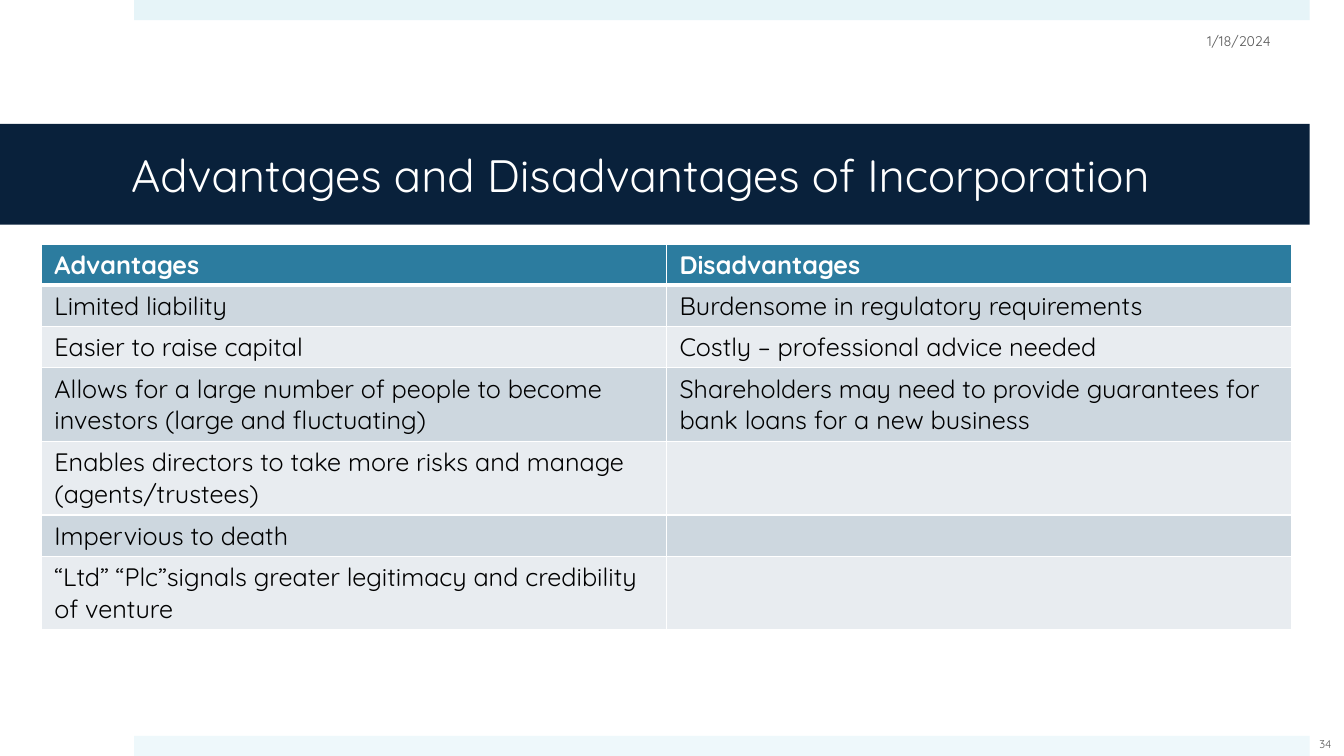
from dataclasses import dataclass

from lxml import etree
from pptx import Presentation
from pptx.dml.color import RGBColor
from pptx.enum import shapes, text
from pptx.oxml import ns
from pptx.util import Inches, Pt


@dataclass(frozen=True)
class Theme:
    font: str = "Quicksand"
    top_band: str = "E6F4F8"
    bottom_band: str = "EEF8FB"
    navy: str = "09213B"
    teal: str = "2C7C9F"
    odd_row: str = "CDD7DF"
    even_row: str = "E8ECF0"
    white: str = "FFFFFF"
    black: str = "000000"
    grey: str = "595959"
    title_size: float = 32.4
    table_size: float = 18
    date_size: float = 10
    number_size: float = 8


THEME = Theme()
LINE_HEIGHT = {1: 0.41, 2: 0.73}
# Left text, right text, lines of text in the row
ROWS = [
    ("Advantages", "Disadvantages", 1),
    ("Limited liability", "Burdensome in regulatory requirements", 1),
    ("Easier to raise capital", "Costly – professional advice needed", 1),
    ("Allows for a large number of people to become investors (large and fluctuating)",
     "Shareholders may need to provide guarantees for bank loans for a new business", 2),
    ("Enables directors to take more risks and manage (agents/trustees)", "", 2),
    ("Impervious to death", "", 1),
    ("“Ltd” “Plc”signals greater legitimacy and credibility of venture", "", 2),
]


def inches(*lengths):
    return [Inches(length) for length in lengths]


def set_text(frame, words, size, color, align=text.PP_ALIGN.LEFT, bold=False):
    para = frame.paragraphs[0]
    para.text = words
    para.alignment = align
    para.font.name = THEME.font
    para.font.size = Pt(size)
    para.font.bold = bold
    para.font.color.rgb = RGBColor.from_string(color)


def add_band(page, box, color):
    band = page.shapes.add_shape(shapes.MSO_SHAPE.RECTANGLE, *inches(*box))
    band.shadow.inherit = False
    band.fill.solid()
    band.fill.fore_color.rgb = RGBColor.from_string(color)
    band.line.fill.background()
    return band


def add_title(page, box, words):
    frame = add_band(page, box, THEME.navy).text_frame
    frame.word_wrap = True
    frame.vertical_anchor = text.MSO_ANCHOR.MIDDLE
    frame.margin_left, frame.margin_right = inches(1.3, 0.3)
    set_text(frame, words, THEME.title_size, THEME.white)


def add_label(page, box, words, size, align):
    frame = page.shapes.add_textbox(*inches(*box)).text_frame
    frame.word_wrap = True
    frame.vertical_anchor = text.MSO_ANCHOR.MIDDLE
    set_text(frame, words, size, THEME.grey, align)


def set_borders(cell, bottom_width):
    """Draw white cell borders; they must come before the fill in the XML."""
    properties = cell._tc.get_or_add_tcPr()
    widths = {"a:lnL": 1, "a:lnR": 1, "a:lnT": 1, "a:lnB": bottom_width}
    for position, (tag, width) in enumerate(widths.items()):
        line = etree.Element(ns.qn(tag), w=str(Pt(width)))
        fill = etree.SubElement(line, ns.qn("a:solidFill"))
        etree.SubElement(fill, ns.qn("a:srgbClr"), val=THEME.white)
        properties.insert(position, line)


def add_comparison(page, box, rows):
    table = page.shapes.add_table(len(rows), 2, *inches(*box)).table
    for column in table.columns:
        column.width = Inches(box[2] / 2)
    for index, (*entries, lines) in enumerate(rows):
        table.rows[index].height = Inches(LINE_HEIGHT[lines])
        header = index == 0
        fill = THEME.teal if header else (THEME.even_row, THEME.odd_row)[index % 2]
        color = THEME.white if header else THEME.black
        for cell, words in zip(table.rows[index].cells, entries):
            cell.fill.solid()
            cell.fill.fore_color.rgb = RGBColor.from_string(fill)
            cell.margin_left = cell.margin_right = Inches(0.13)
            set_text(cell.text_frame, words, THEME.table_size, color, bold=header)
            set_borders(cell, 3 if header else 1)


def add_incorporation_slide(deck):
    page = deck.slides.add_slide(deck.slide_layouts[6])
    add_band(page, (1.33, 0, 11.66, 0.2), THEME.top_band)
    add_band(page, (1.33, 7.3, 11.66, 0.2), THEME.bottom_band)
    add_title(page, (0, 1.23, 12.99, 1), "Advantages and Disadvantages of Incorporation")
    add_label(page, (9.59, 0.21, 3.11, 0.4), "1/18/2024", THEME.date_size,
              text.PP_ALIGN.RIGHT)
    add_label(page, (12.81, 7.18, 0.67, 0.4), "34", THEME.number_size,
              text.PP_ALIGN.CENTER)
    height = sum(LINE_HEIGHT[lines] for *_, lines in ROWS)
    add_comparison(page, (0.41, 2.42, 12.4, height), ROWS)


def main():
    deck = Presentation()
    deck.slide_width, deck.slide_height = inches(13.33, 7.5)
    add_incorporation_slide(deck)
    deck.save("out.pptx")


if __name__ == "__main__":
    main()
